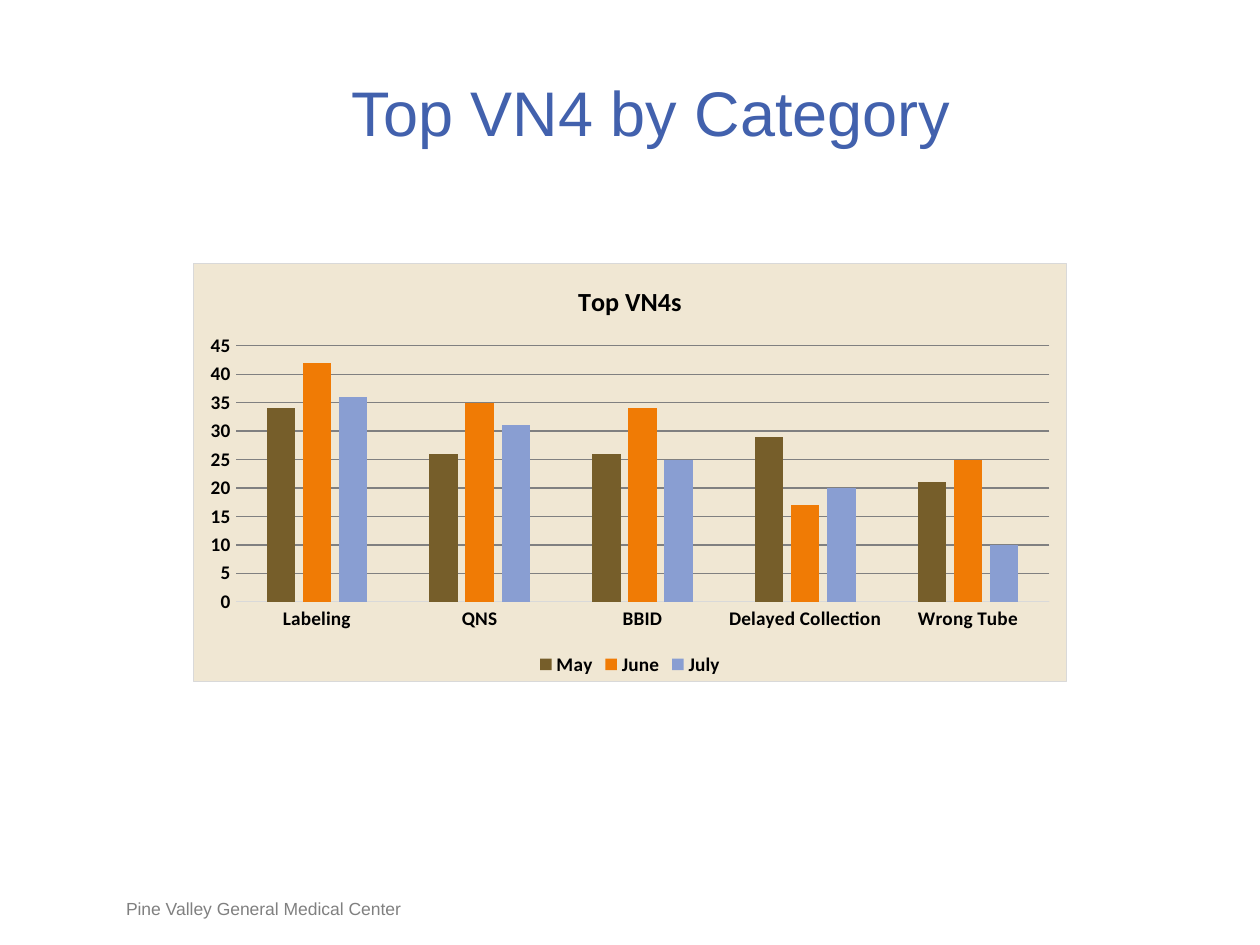
from pptx import Presentation
from pptx.chart.data import CategoryChartData
from pptx.dml.color import RGBColor
from pptx.enum.chart import XL_CHART_TYPE as ChartType, XL_LEGEND_POSITION as LegendPosition
from pptx.enum.chart import XL_TICK_MARK as TickMark
from pptx.enum.text import MSO_ANCHOR as Anchor, PP_ALIGN as Align
from pptx.oxml import parse_xml
from pptx.oxml.ns import nsdecls, qn
from pptx.util import Pt

COLORS = {
    "title": "4261AD",
    "footer": "808080",
    "text": "000000",
    "panel": "F0E7D3",
    "border": "D9D9D9",
    "grid": "808080",
    "May": "765E2A",
    "June": "F07B05",
    "July": "899ED2",
}
CATEGORIES = ["Labeling", "QNS", "BBID", "Delayed Collection", "Wrong Tube"]
MONTHS = {
    "May": [34, 26, 26, 29, 21],
    "June": [42, 35, 34, 17, 25],
    "July": [36, 31, 25, 20, 10],
}


def rgb(name):
    return RGBColor.from_string(COLORS[name])


def style_font(font, name, size, color, bold=False):
    font.name = name
    font.size = Pt(size)
    font.bold = bold
    font.color.rgb = rgb(color)


def style_line(line, color):
    line.color.rgb = rgb(color)
    line.width = Pt(0.75)


def add_text(slide, text, box, size, color, align, anchor):
    frame = slide.shapes.add_textbox(*map(Pt, box)).text_frame
    frame.margin_left = frame.margin_right = frame.margin_top = frame.margin_bottom = 0
    frame.word_wrap = True
    frame.vertical_anchor = anchor
    paragraph = frame.paragraphs[0]
    paragraph.text = text
    paragraph.alignment = align
    style_font(paragraph.font, "Arial", size, color)


def fill_chart_panel(chart):
    panel = parse_xml(
        f'<c:spPr {nsdecls("c", "a")}>'
        f'<a:solidFill><a:srgbClr val="{COLORS["panel"]}"/></a:solidFill>'
        f'<a:ln w="{Pt(0.75)}"><a:solidFill><a:srgbClr val="{COLORS["border"]}"/>'
        "</a:solidFill></a:ln></c:spPr>"
    )
    chart.element.find(qn("c:chart")).addnext(panel)


def style_axes(chart):
    for axis in (chart.category_axis, chart.value_axis):
        axis.major_tick_mark = axis.minor_tick_mark = TickMark.NONE
        style_font(axis.tick_labels.font, "Calibri", 11, "text", bold=True)
    style_line(chart.category_axis.format.line, "border")
    value_axis = chart.value_axis
    value_axis.minimum_scale, value_axis.maximum_scale, value_axis.major_unit = 0, 45, 5
    value_axis.format.line.fill.background()
    style_line(value_axis.major_gridlines.format.line, "grid")


def add_column_chart(slide, title, box):
    data = CategoryChartData()
    data.categories = CATEGORIES
    for month, values in MONTHS.items():
        data.add_series(month, values)
    chart = slide.shapes.add_chart(ChartType.COLUMN_CLUSTERED, *map(Pt, box), data).chart
    style_font(chart.font, "Calibri", 10, "text")
    fill_chart_panel(chart)

    chart.has_title = True
    paragraph = chart.chart_title.text_frame.paragraphs[0]
    paragraph.text = title
    style_font(paragraph.font, "Calibri", 15, "text", bold=True)
    chart.chart_title.include_in_layout = False

    chart.has_legend = True
    chart.legend.position = LegendPosition.BOTTOM
    chart.legend.include_in_layout = False
    style_font(chart.legend.font, "Calibri", 11, "text", bold=True)

    style_axes(chart)
    plot = chart.plots[0]
    plot.gap_width = 219
    plot.overlap = -27
    plot.vary_by_categories = False
    for series in plot.series:
        series.format.fill.solid()
        series.format.fill.fore_color.rgb = rgb(series.name)


def main():
    presentation = Presentation()
    presentation.slide_width, presentation.slide_height = Pt(720), Pt(540)
    slide = presentation.slides.add_slide(presentation.slide_layouts[6])
    add_text(slide, "Pine Valley General Medical Center", (72, 513, 228, 12.2),
             10, "footer", Align.LEFT, Anchor.BOTTOM)
    add_text(slide, "Top VN4 by Category", (66.2, 41.8, 612, 43.9),
             36, "title", Align.CENTER, Anchor.TOP)
    add_column_chart(slide, "Top VN4s", (110, 150.2, 500, 239.5))
    presentation.save("out.pptx")


if __name__ == "__main__":
    main()
